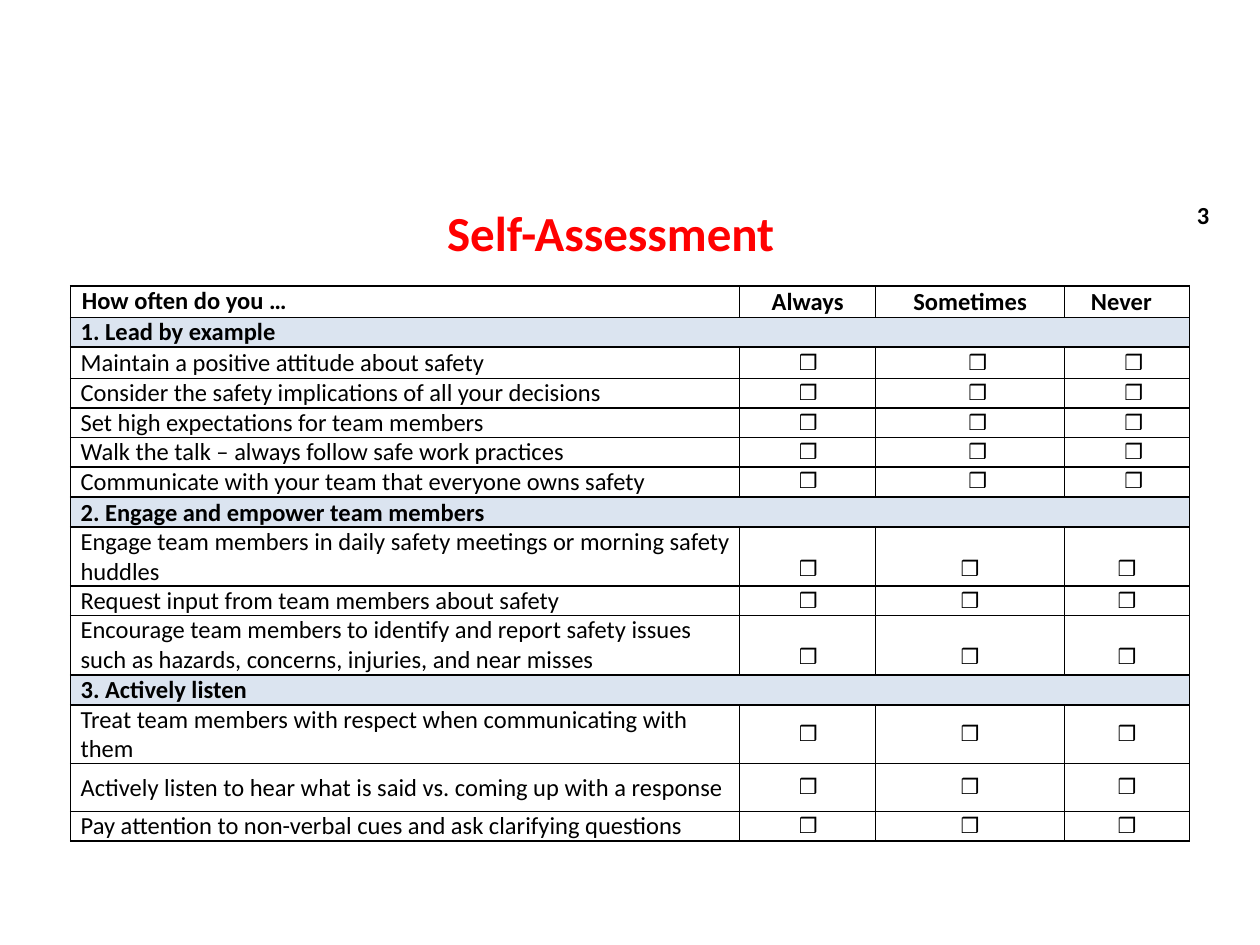
import pptx
import pptx.util
import pptx.dml.color
import pptx.enum.text
import pptx.oxml
import pptx.oxml.ns

Inches, Pt = pptx.util.Inches, pptx.util.Pt
ALIGN, ANCHOR = pptx.enum.text.PP_ALIGN, pptx.enum.text.MSO_ANCHOR

COLORS = {"text": "000000", "title": "FF0000", "section": "DBE4F0", "border": "000000"}
LEFT = 0.56
COLUMNS = [5.31, 1.08, 1.5, 0.99]
LABEL_INDENT = 0.08
SECTION_HEIGHT = 0.23
CHECKBOX = "❒"

HEADER = ["How often do you …", "Always", "Sometimes", "Never"]
HEADER_TOP, HEADER_HEIGHT = 2.27, 0.26

# Each item: label, row height, anchor of its checkboxes
SECTIONS = [
    {"title": "1. Lead by example", "top": 2.52, "indents": [0.01, 0.12, 0.11], "items": [
        ("Maintain a positive attitude about safety", 0.25, ANCHOR.MIDDLE),
        ("Consider the safety implications of all your decisions", 0.23, ANCHOR.MIDDLE),
        ("Set high expectations for team members", 0.23, ANCHOR.MIDDLE),
        ("Walk the talk – always follow safe work practices", 0.23, ANCHOR.MIDDLE),
        ("Communicate with your team that everyone owns safety", 0.23, ANCHOR.MIDDLE)]},
    {"title": "2. Engage and empower team members", "top": 3.95, "indents": [0.01, 0, 0], "items": [
        ("Engage team members in daily safety meetings or morning safety huddles",
         0.45, ANCHOR.BOTTOM),
        ("Request input from team members about safety", 0.23, ANCHOR.MIDDLE),
        ("Encourage team members to identify and report safety issues such as hazards, "
         "concerns, injuries, and near misses", 0.45, ANCHOR.BOTTOM)]},
    {"title": "3. Actively listen", "top": 5.36, "indents": [0.01, 0, 0], "items": [
        ("Treat team members with respect when communicating with them", 0.45, ANCHOR.MIDDLE),
        ("Actively listen to hear what is said vs. coming up with a response",
         0.38, ANCHOR.MIDDLE),
        ("Pay attention to non-verbal cues and ask clarifying questions", 0.23, ANCHOR.MIDDLE)]},
]


def rgb(name):
    return pptx.dml.color.RGBColor.from_string(COLORS[name])


def set_font(paragraph, size, bold=False, name="Calibri", color="text"):
    font = paragraph.font
    font.size, font.bold, font.name = Pt(size), bold, name
    font.color.rgb = rgb(color)


def add_text(slide, text, box, size, color):
    shape = slide.shapes.add_textbox(*map(Inches, box))
    shape.text_frame.word_wrap = True
    shape.text_frame.text = text
    set_font(shape.text_frame.paragraphs[0], size, bold=True, color=color)


def add_borders(cell):
    properties = cell._tc.get_or_add_tcPr()
    for side in ("lnL", "lnR", "lnT", "lnB"):
        properties.append(pptx.oxml.parse_xml(
            f'<a:{side} {pptx.oxml.ns.nsdecls("a")} w="{Pt(1)}"><a:solidFill>'
            f'<a:srgbClr val="{COLORS["border"]}"/></a:solidFill></a:{side}>'))


def add_grid(slide, top, heights):
    """Add a bordered table without fill or cell margins."""
    frame = slide.shapes.add_table(len(heights), len(COLUMNS), Inches(LEFT), Inches(top),
                                   Inches(sum(COLUMNS)), Inches(sum(heights)))
    table = frame.table
    table.first_row = table.horz_banding = False
    for column, width in zip(table.columns, COLUMNS):
        column.width = Inches(width)
    for row, height in zip(table.rows, heights):
        row.height = Inches(height)
    for cell in table.iter_cells():
        cell.margin_left = cell.margin_right = cell.margin_top = cell.margin_bottom = 0
        add_borders(cell)
        cell.fill.background()
    return table


def write_cell(cell, text, indent=0.0, anchor=ANCHOR.MIDDLE, align=ALIGN.LEFT,
               size=14, **font):
    cell.text = text
    cell.margin_left = Inches(indent)
    cell.vertical_anchor = anchor
    paragraph = cell.text_frame.paragraphs[0]
    paragraph.alignment = align
    set_font(paragraph, size, **font)


def add_header(slide):
    table = add_grid(slide, HEADER_TOP, [HEADER_HEIGHT])
    write_cell(table.cell(0, 0), HEADER[0], 0.09, ANCHOR.TOP, bold=True)
    for column, text in enumerate(HEADER[1:], 1):
        write_cell(table.cell(0, column), text, align=ALIGN.CENTER, bold=True)
    table.cell(0, 3).margin_right = Inches(0.09)


def add_section(slide, section):
    heights = [SECTION_HEIGHT] + [height for _, height, _ in section["items"]]
    table = add_grid(slide, section["top"], heights)
    title = table.cell(0, 0)
    title.merge(table.cell(0, len(COLUMNS) - 1))
    title.fill.solid()
    title.fill.fore_color.rgb = rgb("section")
    write_cell(title, section["title"], LABEL_INDENT, bold=True)
    for row, (label, _, anchor) in enumerate(section["items"], 1):
        write_cell(table.cell(row, 0), label, LABEL_INDENT)
        for column, indent in enumerate(section["indents"], 1):
            cell = table.cell(row, column)
            write_cell(cell, CHECKBOX, indent, anchor, ALIGN.CENTER, 12, name="Arial")
            if anchor == ANCHOR.BOTTOM:
                cell.margin_bottom = Inches(0.04)


def main():
    presentation = pptx.Presentation()
    presentation.slide_width, presentation.slide_height = Inches(10), Inches(7.5)
    slide = presentation.slides.add_slide(presentation.slide_layouts[6])
    add_text(slide, "3", (9.4, 1.54, 0.5, 0.34), 14, "text")
    add_header(slide)
    add_text(slide, "Self-Assessment", (3.45, 1.56, 3.11, 0.57), 28, "title")
    for section in SECTIONS:
        add_section(slide, section)
    presentation.save("out.pptx")


if __name__ == "__main__":
    main()
